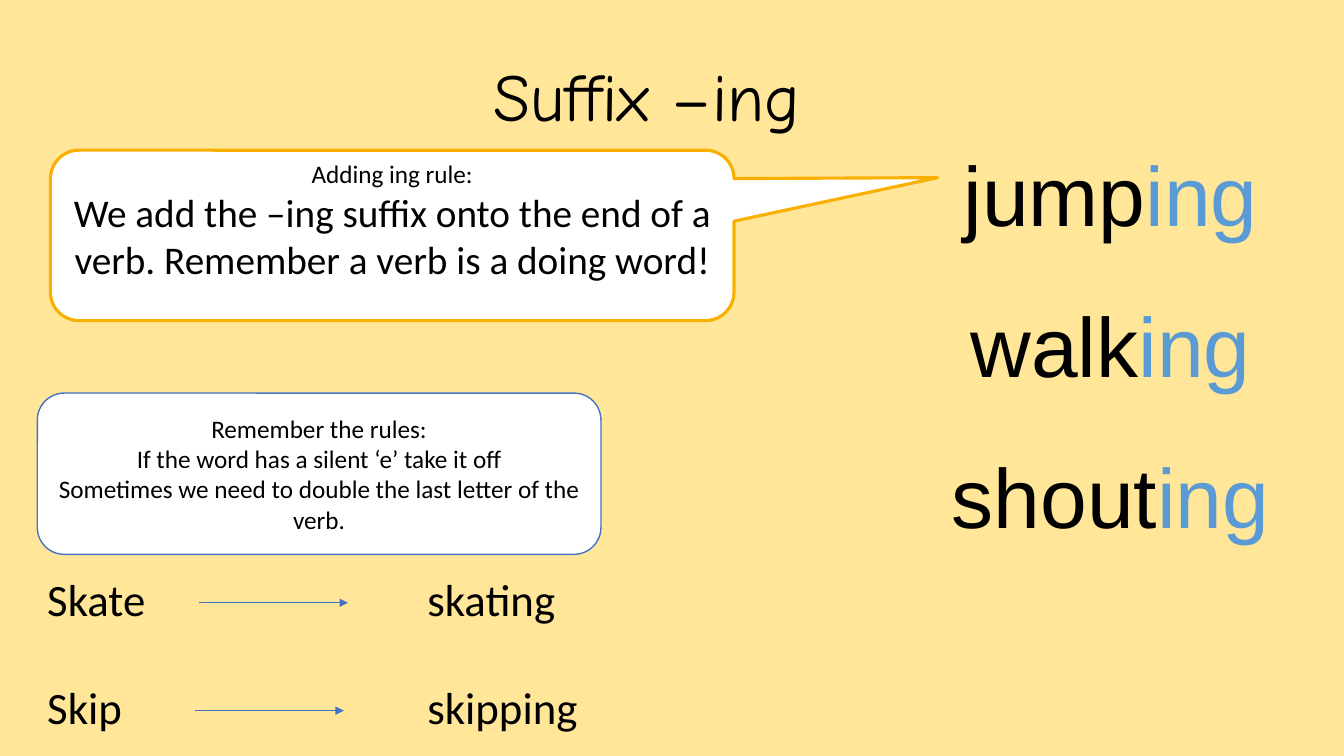
from lxml import etree
from pptx import Presentation
from pptx.dml.color import RGBColor
from pptx.enum.shapes import MSO_CONNECTOR, MSO_SHAPE
from pptx.enum.text import MSO_ANCHOR, MSO_AUTO_SIZE, PP_ALIGN
from pptx.oxml.ns import qn
from pptx.util import Inches, Pt

STRAIGHT = MSO_CONNECTOR.STRAIGHT
CALLOUT = MSO_SHAPE.ROUNDED_RECTANGULAR_CALLOUT
ROUNDED = MSO_SHAPE.ROUNDED_RECTANGLE
TOP, MIDDLE = MSO_ANCHOR.TOP, MSO_ANCHOR.MIDDLE
NO_RESIZE = MSO_AUTO_SIZE.NONE
LEFT, CENTER = PP_ALIGN.LEFT, PP_ALIGN.CENTER

COLORS = {
    "background": "FFE699",
    "text": "000000",
    "suffix": "5B9BD5",
    "box": "FFFFFF",
    "callout": "FAB001",
    "blue": "4472C4",
}


def color(name):
    return RGBColor.from_string(COLORS[name])


def write(shape, paragraphs, font_name, anchor=TOP, **paragraph_format):
    frame = shape.text_frame
    frame.word_wrap = True
    frame.auto_size = NO_RESIZE
    frame.vertical_anchor = anchor
    for index, (size, runs) in enumerate(paragraphs):
        paragraph = frame.add_paragraph() if index else frame.paragraphs[0]
        for attribute, value in paragraph_format.items():
            setattr(paragraph, attribute, value)
        for text, color_name in runs:
            run = paragraph.add_run()
            run.text = text
            run.font.name = font_name
            run.font.size = Pt(size)
            run.font.color.rgb = color(color_name)
    return frame


presentation = Presentation()
presentation.slide_width = Inches(13.33)
presentation.slide_height = Inches(7.5)
slide = presentation.slides.add_slide(presentation.slide_layouts[5])
slide.background.fill.solid()
slide.background.fill.fore_color.rgb = color("background")

title = slide.shapes.title
title.left, title.top = Inches(0.86), Inches(0.49)
title.width, title.height = Inches(11.11), Inches(0.91)
write(title, [(48, [("Suffix –ing", "text")])], "Comic Neue", alignment=CENTER)

examples = slide.shapes.add_textbox(Inches(9.19), Inches(0.86), Inches(3.65), Inches(4.64))
verbs = ["jump", "walk", "shout"]
write(examples, [(60, [(verb, "text"), ("ing", "suffix")]) for verb in verbs],
      "Arial", alignment=CENTER, line_spacing=1.5)

adding_rule = [
    (18, "Adding ing rule:"),
    (28, "We add the –ing suffix onto the end of a verb. Remember a verb is a doing word!"),
]
spelling_rules = [
    (18, "Remember the rules:"),
    (18, "If the word has a silent ‘e’ take it off"),
    (18, "Sometimes we need to double the last letter of the verb."),
]
rule_boxes = [
    (CALLOUT, (0.5, 1.49, 6.78, 1.69), (0.798, -0.339, 0.167), "callout", 2.25, 0.35, adding_rule),
    (ROUNDED, (0.37, 3.9, 5.59, 1.6), (0.167,), "blue", 1, 0.05, spelling_rules),
]
for kind, position, adjustments, line_color, line_width, bottom, lines in rule_boxes:
    box = slide.shapes.add_shape(kind, *map(Inches, position))
    box.shadow.inherit = False
    for index, adjustment in enumerate(adjustments):
        box.adjustments[index] = adjustment
    box.fill.solid()
    box.fill.fore_color.rgb = color("box")
    box.line.color.rgb = color(line_color)
    box.line.width = Pt(line_width)
    frame = write(box, [(size, [(text, "text")]) for size, text in lines],
                  "Calibri", MIDDLE, alignment=CENTER)
    frame.margin_bottom = Inches(bottom)

word_pairs = [("Skate", "skating"), ("Skip", "skipping")]
pair_box = slide.shapes.add_textbox(Inches(0.37), Inches(5.62), Inches(7.04), Inches(2.02))
pair_frame = write(pair_box, [(32, [("\t".join(pair), "text")]) for pair in word_pairs],
                   "Calibri", alignment=LEFT)
for paragraph in pair_frame.paragraphs:
    tabs = etree.SubElement(paragraph._p.get_or_add_pPr(), qn("a:tabLst"))
    etree.SubElement(tabs, qn("a:tab"), pos=str(Inches(3.77)), algn="l")
pair_frame.paragraphs[1].space_before = Pt(39)

for left, top in [(1.97, 5.98), (1.93, 7.05)]:
    arrow = slide.shapes.add_connector(
        STRAIGHT, Inches(left), Inches(top), Inches(left + 1.48), Inches(top))
    arrow.line.color.rgb = color("blue")
    arrow.line.width = Pt(0.5)
    etree.SubElement(arrow.line._get_or_add_ln(), qn("a:tailEnd"), type="triangle")
    etree.SubElement(arrow._element.spPr, qn("a:effectLst"))

presentation.save("out.pptx")
